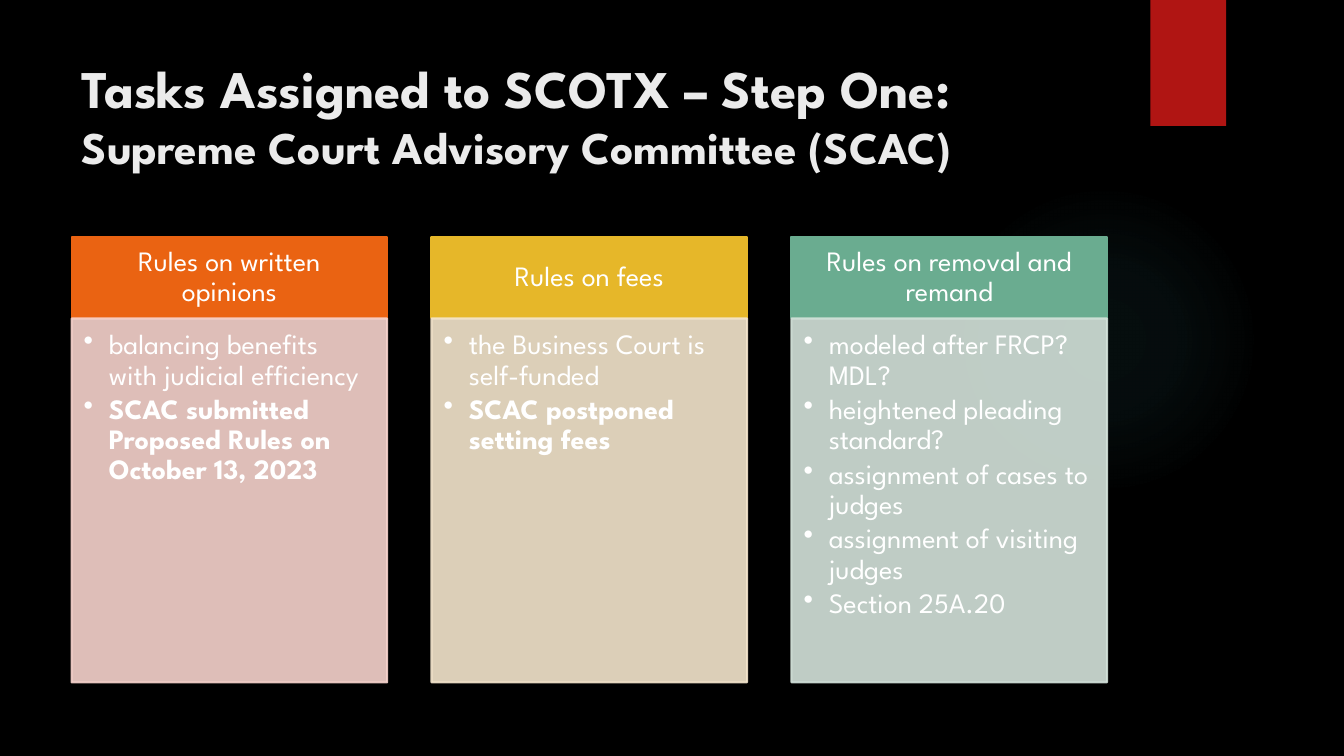
"""Build the slide on tasks assigned to SCOTX, step one."""
from dataclasses import dataclass

from pptx import Presentation
from pptx import oxml, util as u
from pptx.dml.color import RGBColor
from pptx.enum import shapes, text
from pptx.oxml import ns

WIDTH, HEIGHT = u.Inches(13.33), u.Inches(7.5)
FONT = "League Spartan"
COLOURS = {
    "night": "000000", "ribbon": "B01513", "glow": "50B9C1",
    "heading": "EBEBEB", "text": "FFFFFF",
    "orange": "EA6312", "pink": "F7D3CC",
    "gold": "E6B729", "sand": "F5E6CD",
    "green": "6AAC90", "mint": "D4E3DB",
}
MARGIN, PITCH, CARD_WIDTH = 5.33, 26.78, 23.48
HEADER_TOP, HEADER_HEIGHT, BODY_HEIGHT = 31.33, 10.8, 48.13
GLOW_STOPS = ((0, 7), (36, 6), (69, 0))


@dataclass(frozen=True)
class Area:
    """Place and size in percent of the slide."""
    left: float
    top: float
    width: float
    height: float

    def lengths(self) -> tuple[int, int, int, int]:
        return (int(WIDTH * self.left / 100), int(HEIGHT * self.top / 100),
                int(WIDTH * self.width / 100), int(HEIGHT * self.height / 100))


@dataclass(frozen=True)
class Task:
    """One column of rules: heading, points and colours."""
    heading: str
    points: tuple[str, ...]
    strong: tuple[str, ...]
    header_colour: str
    body_colour: str


TASKS = (
    Task("Rules on written opinions",
         ("balancing benefits with judicial efficiency",),
         ("SCAC submitted Proposed Rules on October 13, 2023",),
         "orange", "pink"),
    Task("Rules on fees",
         ("the Business Court is self-funded",),
         ("SCAC postponed setting fees",),
         "gold", "sand"),
    Task("Rules on removal and remand",
         ("modeled after FRCP? MDL?", "heightened pleading standard?",
          "assignment of cases to judges", "assignment of visiting judges",
          "Section 25A.20"),
         (), "green", "mint"),
)


def rgb(name: str) -> RGBColor:
    return RGBColor.from_string(COLOURS[name])


def add_panel(slide, area: Area, colour: str, outlined: bool = True,
              kind=shapes.MSO_SHAPE.RECTANGLE):
    panel = slide.shapes.add_shape(kind, *area.lengths())
    panel.shadow.inherit = False
    panel.fill.solid()
    panel.fill.fore_color.rgb = rgb(colour)
    if outlined:
        panel.line.color.rgb = rgb(colour)
        panel.line.width = u.Pt(1.5)
    else:
        panel.line.fill.background()
    return panel


def add_glow(slide) -> None:
    glow = add_panel(slide, Area(70.59, 24.4, 23.11, 41.07), "glow", False,
                     shapes.MSO_SHAPE.OVAL)
    stops = "".join(
        f'<a:gs pos="{position * 1000}"><a:srgbClr val="{COLOURS["glow"]}">'
        f'<a:alpha val="{opacity * 1000}"/></a:srgbClr></a:gs>'
        for position, opacity in GLOW_STOPS)
    gradient = oxml.parse_xml(
        f'<a:gradFill {ns.nsdecls("a")}><a:gsLst>{stops}</a:gsLst>'
        '<a:path path="circle"><a:fillToRect l="50000" t="50000" r="50000" '
        'b="50000"/></a:path></a:gradFill>')
    solid = glow.element.spPr.find(ns.qn("a:solidFill"))
    solid.getparent().replace(solid, gradient)


def make_translucent(panel, percent: int) -> None:
    for colour in panel.element.spPr.iter(ns.qn("a:srgbClr")):
        colour.append(oxml.parse_xml(
            f'<a:alpha {ns.nsdecls("a")} val="{percent * 1000}"/>'))


def set_frame(panel, anchor, insets: tuple[float, float, float, float]):
    frame = panel.text_frame
    frame.word_wrap = True
    frame.vertical_anchor = anchor
    (frame.margin_left, frame.margin_top,
     frame.margin_right, frame.margin_bottom) = map(u.Inches, insets)
    return frame


def set_font(paragraph, colour: str, bold: bool) -> None:
    paragraph.font.name = FONT
    paragraph.font.bold = bold
    paragraph.font.color.rgb = rgb(colour)


def write_line(paragraph, wording: str, align, after: float,
               bold: bool = False) -> None:
    paragraph.text = wording
    paragraph.alignment = align
    paragraph.line_spacing = 0.9
    paragraph.space_after = u.Pt(after)
    set_font(paragraph, "text", bold)
    paragraph.font.size = u.Pt(20)


def add_bullet(paragraph) -> None:
    properties = paragraph._p.get_or_add_pPr()
    properties.set("marL", str(u.Inches(0.25)))
    properties.set("indent", str(-u.Inches(0.25)))
    properties.append(oxml.parse_xml(
        f'<a:buChar {ns.nsdecls("a")} char="•"/>'))


def add_task(slide, column: int, task: Task) -> None:
    left = MARGIN + column * PITCH
    header = add_panel(slide, Area(left, HEADER_TOP, CARD_WIDTH, HEADER_HEIGHT),
                       task.header_colour)
    heading = set_frame(header, text.MSO_ANCHOR.MIDDLE, (0.16, 0.09, 0.16, 0.09))
    write_line(heading.paragraphs[0], task.heading, text.PP_ALIGN.CENTER, 0)

    body = add_panel(slide, Area(left, HEADER_TOP + HEADER_HEIGHT, CARD_WIDTH,
                                 BODY_HEIGHT), task.body_colour)
    make_translucent(body, 90)
    points = set_frame(body, text.MSO_ANCHOR.TOP, (0.12, 0.12, 0.16, 0.17))
    for index, point in enumerate(task.points + task.strong):
        paragraph = points.add_paragraph() if index else points.paragraphs[0]
        add_bullet(paragraph)
        write_line(paragraph, point, text.PP_ALIGN.LEFT, 3, point in task.strong)


def write_title(slide) -> None:
    title = slide.shapes.title
    title.left, title.top, title.width, title.height = Area(
        MARGIN, 6.67, 77.19, 20.4).lengths()
    frame = set_frame(title, text.MSO_ANCHOR.TOP, (0.1, 0.05, 0.1, 0.05))
    frame.auto_size = text.MSO_AUTO_SIZE.NONE
    paragraph = frame.paragraphs[0]
    paragraph.alignment = text.PP_ALIGN.LEFT
    set_font(paragraph, "heading", True)
    step = paragraph.add_run()
    step.text = "Tasks Assigned to SCOTX – Step One:"
    step.font.size = u.Pt(37.8)
    paragraph.add_line_break()
    committee = paragraph.add_run()
    committee.text = "Supreme Court Advisory Committee (SCAC)"
    committee.font.size = u.Pt(32.4)


def main() -> None:
    deck = Presentation()
    deck.slide_width, deck.slide_height = WIDTH, HEIGHT
    slide = deck.slides.add_slide(deck.slide_layouts.get_by_name("Title Only"))
    slide.background.fill.solid()
    slide.background.fill.fore_color.rgb = rgb("night")
    add_glow(slide)
    add_panel(slide, Area(85.6, 0, 5.63, 16.67), "ribbon", False)
    write_title(slide)
    for column, task in enumerate(TASKS):
        add_task(slide, column, task)
    deck.save("out.pptx")


if __name__ == "__main__":
    main()
